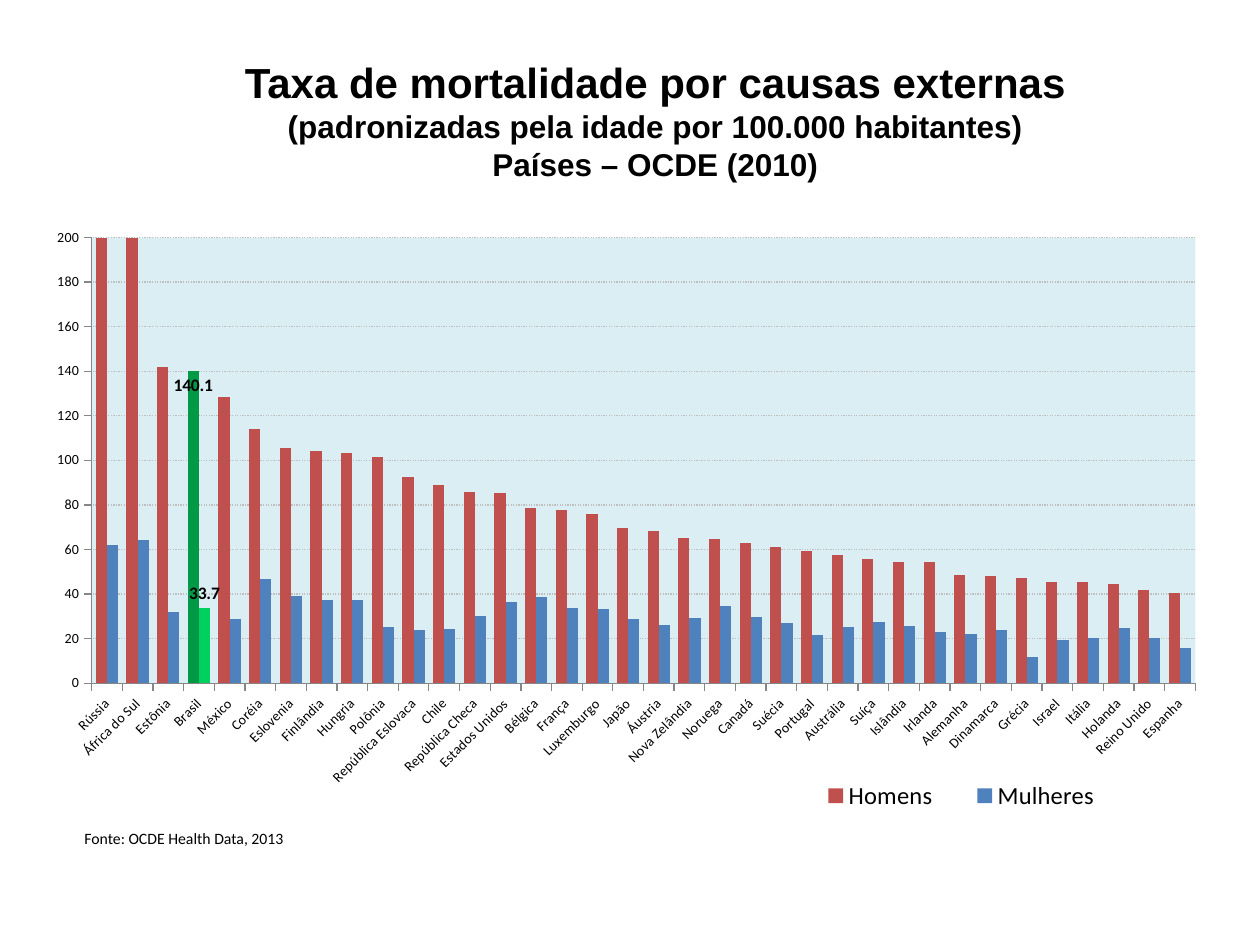
from pptx import Presentation, oxml, util as u
from pptx.chart.data import CategoryChartData
from pptx.dml.color import RGBColor
from pptx.enum import chart as c, dml, text
from pptx.oxml.ns import nsdecls

WIDTH, HEIGHT = 10, 7.5
TITLE = [
    ("Taxa de mortalidade por causas externas", 24),
    ("(padronizadas pela idade por 100.000 habitantes)", 18),
    ("Países – OCDE (2010)", 18),
]
SOURCE = "Fonte: OCDE Health Data, 2013"
RATES = [
    ("Rússia", 264.7, 61.8), ("África do Sul", 221, 64.4),
    ("Estônia", 141.7, 31.7), ("Brasil", 140.1, 33.7),
    ("México", 128.6, 28.6), ("Coréia", 114.1, 46.8),
    ("Eslovenia", 105.6, 39.3), ("Finlândia", 104.4, 37.1),
    ("Hungria", 103.3, 37.3), ("Polônia", 101.6, 25.4),
    ("República Eslovaca", 92.6, 23.8), ("Chile", 89.1, 24.5),
    ("República Checa", 85.7, 30.1), ("Estados Unidos", 85.3, 36.2),
    ("Bélgica", 78.5, 38.7), ("França", 77.6, 33.6),
    ("Luxemburgo", 76.1, 33.1), ("Japão", 69.6, 28.7),
    ("Áustria", 68.2, 26.1), ("Nova Zelândia", 65.2, 29.2),
    ("Noruega", 64.8, 34.5), ("Canadá", 63.1, 29.5),
    ("Suécia", 61.1, 27.2), ("Portugal", 59.3, 21.5),
    ("Austrália", 57.4, 25.4), ("Suíça", 55.7, 27.3),
    ("Islândia", 54.5, 25.5), ("Irlanda", 54.5, 23.1),
    ("Alemanha", 48.5, 22.1), ("Dinamarca", 48.1, 23.8),
    ("Grécia", 47.4, 11.7), ("Israel", 45.3, 19.2),
    ("Itália", 45.2, 20.2), ("Holanda", 44.4, 24.6),
    ("Reino Unido", 42, 20.2), ("Espanha", 40.6, 15.6),
]
COUNTRIES, MEN, WOMEN = zip(*RATES)
HIGHLIGHT = COUNTRIES.index("Brasil")
SERIES = [
    ("Mulheres", WOMEN, "4F81BD", "00D05E", c.XL_LABEL_POSITION.OUTSIDE_END),
    ("Homens", MEN, "C0504D", "009A46", c.XL_LABEL_POSITION.INSIDE_END),
]


def box(*lengths):
    return [u.Inches(length) for length in lengths]


def color(hex_string):
    return RGBColor.from_string(hex_string)


def style(font, size, name="Calibri", bold=False):
    font.size, font.name, font.bold = u.Pt(size), name, bold
    font.color.rgb = color("000000")


def paint(target, hex_string):
    target.format.fill.solid()
    target.format.fill.fore_color.rgb = color(hex_string)


def place(parent, index, left, top, width, height, inner=False):
    for old in parent.xpath("c:layout"):
        parent.remove(old)
    target = '<c:layoutTarget val="inner"/>' if inner else ""
    parent.insert(index, oxml.parse_xml(
        f'<c:layout {nsdecls("c")}><c:manualLayout>{target}'
        '<c:xMode val="edge"/><c:yMode val="edge"/>'
        f'<c:x val="{left}"/><c:y val="{top}"/><c:w val="{width}"/><c:h val="{height}"/>'
        '</c:manualLayout></c:layout>'))


def add_title(slide):
    frame = slide.shapes.add_textbox(*box(1.54, 0.44, 7.32, 1.02)).text_frame
    frame.word_wrap = True
    frame.vertical_anchor = text.MSO_ANCHOR.MIDDLE
    paragraph = frame.paragraphs[0]
    paragraph.text = "\v".join(line for line, size in TITLE)
    paragraph.alignment = text.PP_ALIGN.CENTER
    paragraph.space_after = u.Pt(6)
    for run, (line, size) in zip(paragraph.runs, TITLE):
        style(run.font, size, "Arial", True)


def add_source(slide):
    frame = slide.shapes.add_textbox(*box(0.67, 6.58, 1.97, 0.24)).text_frame
    frame.word_wrap = True
    frame.margin_left = frame.margin_right = frame.margin_top = frame.margin_bottom = 0
    frame.text = SOURCE
    style(frame.paragraphs[0].runs[0].font, 9)


def add_rates_chart(slide):
    data = CategoryChartData()
    data.categories = COUNTRIES
    for name, values, *_ in SERIES:
        data.add_series(name, values)
    chart = slide.shapes.add_chart(
        c.XL_CHART_TYPE.COLUMN_CLUSTERED, *box(0.43, 1.78, 9.29, 4.8), data).chart
    chart.has_title = False
    style(chart.font, 10)

    plot = chart.plots[0]
    plot.gap_width, plot.overlap, plot.vary_by_categories = 75, 0, False
    for series, (_, _, fill, accent, position) in zip(plot.series, SERIES):
        paint(series, fill)
        series.invert_if_negative = False
        point = series.points[HIGHLIGHT]
        paint(point, accent)
        style(point.data_label.font, 10, bold=True)
        point.data_label.position = position
    women, men = chart.element.xpath(".//c:ser")
    women.addprevious(men)

    for axis in (chart.category_axis, chart.value_axis):
        style(axis.tick_labels.font, 8)
        axis.major_tick_mark = c.XL_TICK_MARK.OUTSIDE
        axis.format.line.color.rgb = color("868686")
    value_axis = chart.value_axis
    value_axis.minimum_scale, value_axis.maximum_scale, value_axis.major_unit = 0, 200, 20
    grid = value_axis.major_gridlines.format.line
    grid.color.rgb = color("BFBFBF")
    grid.width = u.Pt(0.75)
    grid.dash_style = dml.MSO_LINE.ROUND_DOT
    chart.element.xpath(".//c:catAx/c:txPr/a:bodyPr")[0].set("rot", "-2700000")

    chart.has_legend = True
    chart.legend.position = c.XL_LEGEND_POSITION.BOTTOM
    chart.legend.include_in_layout = False
    style(chart.legend.font, 14)
    place(chart.element.xpath(".//c:legend")[0], 1, 0.63, 0.91, 0.29, 0.07)

    area = chart.element.xpath(".//c:plotArea")[0]
    place(area, 0, 0.032, 0.022, 0.943, 0.737, inner=True)
    area.append(oxml.parse_xml(
        f'<c:spPr {nsdecls("c", "a")}><a:solidFill><a:srgbClr val="DBEEF4"/>'
        '</a:solidFill></c:spPr>'))


presentation = Presentation()
presentation.slide_width, presentation.slide_height = u.Inches(WIDTH), u.Inches(HEIGHT)
slide = presentation.slides.add_slide(presentation.slide_layouts[6])
add_title(slide)
add_rates_chart(slide)
add_source(slide)
presentation.save("out.pptx")
